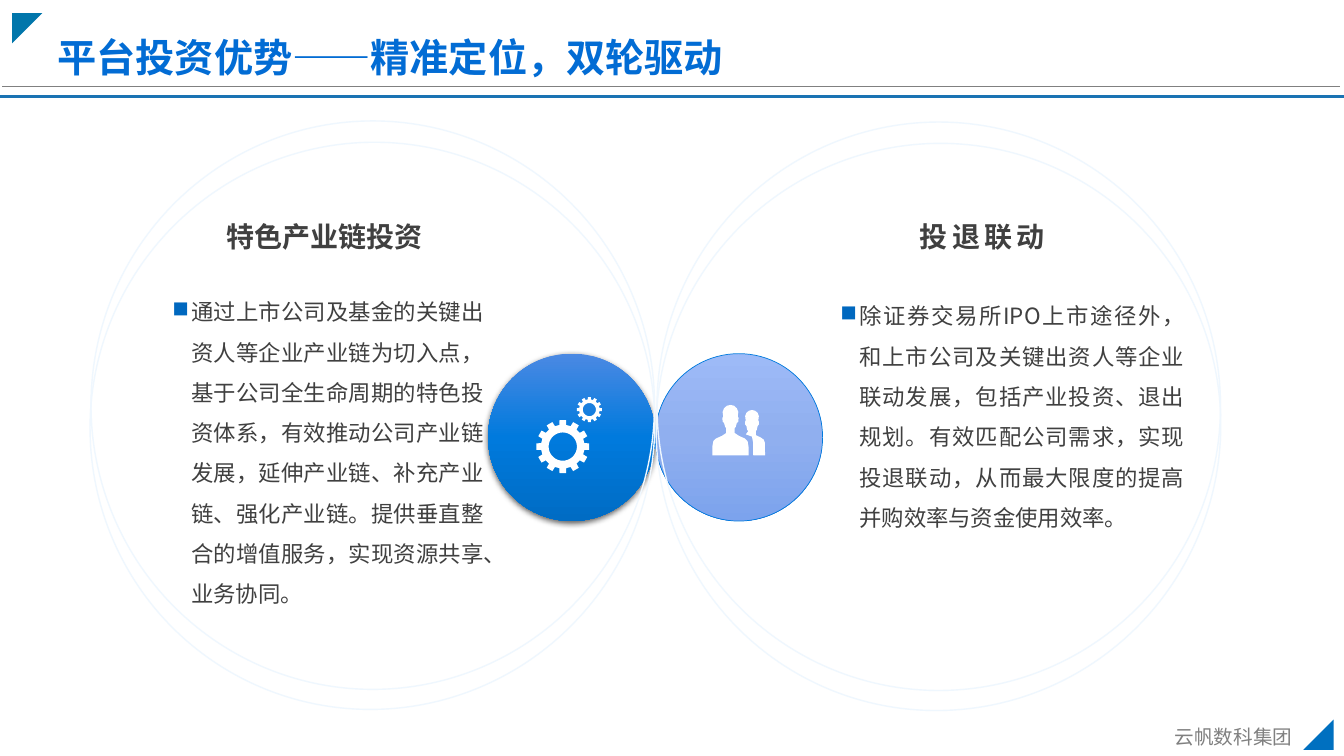
from math import cos, radians, sin

from lxml import etree
from pptx import Presentation
from pptx.dml.color import RGBColor
from pptx.enum.shapes import MSO_CONNECTOR, MSO_SHAPE
from pptx.enum.text import MSO_AUTO_SIZE, PP_ALIGN
from pptx.oxml import parse_xml
from pptx.oxml.ns import nsdecls, qn
from pptx.util import Pt

STRAIGHT = MSO_CONNECTOR.STRAIGHT
ELLIPSE = MSO_SHAPE.OVAL
DISC = MSO_SHAPE.FLOWCHART_CONNECTOR
CORNER = MSO_SHAPE.RIGHT_TRIANGLE
FIT_TEXT = MSO_AUTO_SIZE.SHAPE_TO_FIT_TEXT
JUSTIFY = PP_ALIGN.JUSTIFY

FONT = "Noto Sans CJK SC"
WHITE = RGBColor(0xFF, 0xFF, 0xFF)
GREY = RGBColor(0x80, 0x80, 0x80)
DARK = RGBColor(0x40, 0x40, 0x40)
TITLE_BLUE = RGBColor(0x02, 0x6C, 0xD4)
RULE_BLUE = RGBColor(0x1A, 0x73, 0xB3)
TOP_BLUE = RGBColor(0x01, 0x76, 0xAB)
BOTTOM_BLUE = RGBColor(0x00, 0x70, 0xC0)
BULLET_BLUE = RGBColor(0x00, 0x68, 0xBF)
RIM_BLUE = RGBColor(0x00, 0x7A, 0xDD)
RING_BLUE = RGBColor(0xEF, 0xF7, 0xFE)
CHAIN_STOPS = (RGBColor(0x4B, 0x89, 0xE3), RIM_BLUE, RGBColor(0x00, 0x6C, 0xC4))
EXIT_STOPS = (RGBColor(0x9D, 0xBA, 0xF7), RGBColor(0x90, 0xAF, 0xEF),
              RGBColor(0x7C, 0xA3, 0xED))

CHAIN_TEXT = ("通过上市公司及基金的关键出资人等企业产业链为切入点，基于公司全生命周期的"
              "特色投资体系，有效推动公司产业链发展，延伸产业链、补充产业链、强化产业链。"
              "提供垂直整合的增值服务，实现资源共享、业务协同。")
EXIT_TEXT = ("除证券交易所IPO上市途径外，和上市公司及关键出资人等企业联动发展，"
             "包括产业投资、退出规划。有效匹配公司需求，实现投退联动，"
             "从而最大限度的提高并购效率与资金使用效率。")

# Right-hand outlines of the two figures, from the crown down
FRONT_HALF = [(0, 0), (2.5, 0.5), (4.6, 2.4), (5.6, 5), (5.2, 8.4), (5.8, 9.2),
              (5.6, 11.8), (4.5, 13), (3.8, 15.6), (3, 16.6), (3, 20), (6, 22),
              (10.4, 24), (12.2, 25.8), (12.9, 29.5), (13, 36)]
BACK_HEAD = [(0, 3.6), (2.2, 4.1), (4, 5.6), (4.9, 7.9), (4.5, 11.2), (5, 12),
             (4.9, 14), (4, 15), (3.4, 17.8), (2.7, 18.7)]
BACK_BODY = [(2.7, 21.5), (6.2, 23.2), (8.4, 24.8), (9.2, 27), (9.3, 36),
             (0.9, 36), (0.8, 27), (0, 22.6), (-4.4, 21)]


def style(shape, fill=None, line=None, width=1):
    shape.shadow.inherit = False
    if fill is None:
        shape.fill.background()
    else:
        shape.fill.solid()
        shape.fill.fore_color.rgb = fill
    if line is None:
        shape.line.fill.background()
    else:
        shape.line.color.rgb = line
        shape.line.width = Pt(width)


def add_rule(slide, x1, x2, y, color, width):
    rule = slide.shapes.add_connector(STRAIGHT, Pt(x1), Pt(y), Pt(x2), Pt(y))
    rule.line.color.rgb = color
    rule.line.width = Pt(width)
    etree.SubElement(rule._element.spPr, qn("a:effectLst"))


def add_preset(slide, kind, x, y, w, h, rotation=0, **look):
    shape = slide.shapes.add_shape(kind, Pt(x), Pt(y), Pt(w), Pt(h))
    shape.rotation = rotation
    style(shape, **look)
    return shape


def add_disc(slide, x, stops, line=None, shadow=False):
    disc = add_preset(slide, DISC, x, 252.6, 119.6, 119.6, line=line, width=0.5)
    properties = disc._element.spPr
    stop_xml = "".join(f'<a:gs pos="{i * 50000}"><a:srgbClr val="{color}"/></a:gs>'
                       for i, color in enumerate(stops))
    gradient = parse_xml(f'<a:gradFill {nsdecls("a")}><a:gsLst>{stop_xml}</a:gsLst>'
                         '<a:lin ang="5400000" scaled="0"/></a:gradFill>')
    properties.replace(properties.find(qn("a:noFill")), gradient)
    if shadow:
        properties.find(qn("a:effectLst")).append(parse_xml(
            f'<a:outerShdw {nsdecls("a")} blurRad="{Pt(4.5)}" dist="{Pt(1.5)}" '
            'dir="5400000" rotWithShape="0"><a:srgbClr val="000000">'
            '<a:alpha val="63000"/></a:srgbClr></a:outerShdw>'))


def add_outline(slide, contours):
    """Draw closed contours as one white shape; an inner contour is a hole."""
    contours = [[(Pt(x), Pt(y)) for x, y in contour] for contour in contours]
    builder = slide.shapes.build_freeform(*contours[0][0])
    builder.add_line_segments(contours[0][1:], close=True)
    for contour in contours[1:]:
        builder.move_to(*contour[0])
        builder.add_line_segments(contour[1:], close=True)
    style(builder.convert_to_shape(), fill=WHITE)


def add_gear(slide, cx, cy, tip, root, hole, teeth=12):
    def at(radius, angle):
        return cx + radius * cos(radians(angle)), cy + radius * sin(radians(angle))

    profile = [(root, -9), (tip, -7), (tip, 7), (root, 9)]
    rim = [at(radius, tooth * 360 / teeth + turn)
           for tooth in range(teeth) for radius, turn in profile]
    add_outline(slide, [rim, [at(hole, -angle) for angle in range(0, 360, 10)]])


def add_people(slide, front_x, back_x, top):
    def mirror(half):
        return [(-x, y) for x, y in reversed(half[1:])]

    front = FRONT_HALF + mirror(FRONT_HALF)
    back = BACK_HEAD + BACK_BODY + mirror(BACK_HEAD)
    add_outline(slide, [[(cx + x, top + y) for x, y in figure]
                        for cx, figure in ((front_x, front), (back_x, back))])


def add_text(slide, x, y, w, h, text, size, color, bold=False, spacing=None,
             tracking=0, bullet=False, wrap=True):
    box = slide.shapes.add_textbox(Pt(x), Pt(y), Pt(w), Pt(h))
    box.text_frame.word_wrap = wrap
    box.text_frame.auto_size = FIT_TEXT
    paragraph = box.text_frame.paragraphs[0]
    paragraph.text = text
    if spacing:
        paragraph.line_spacing = spacing
    if bullet:
        paragraph.alignment = JUSTIFY
        properties = paragraph._p.get_or_add_pPr()
        properties.set("marL", str(Pt(13.5)))
        properties.set("indent", str(-Pt(13.5)))
        color_tag = etree.SubElement(properties, qn("a:buClr"))
        etree.SubElement(color_tag, qn("a:srgbClr"), val=str(BULLET_BLUE))
        etree.SubElement(properties, qn("a:buFont"), typeface="Wingdings")
        etree.SubElement(properties, qn("a:buChar"), char="n")
    font = paragraph.font
    font.name, font.size, font.bold = FONT, Pt(size), bold
    font.color.rgb = color
    etree.SubElement(font._rPr, qn("a:ea"), typeface=FONT)
    if tracking:
        font._rPr.set("spc", str(tracking * 100))


def add_rings(slide, x, y):
    add_preset(slide, ELLIPSE, x, y, 402.5, 406, line=RING_BLUE)
    add_preset(slide, ELLIPSE, x - 2, y + 16.5, 406, 402.5, rotation=120, line=RING_BLUE)


def main():
    deck = Presentation()
    deck.slide_width, deck.slide_height = Pt(960), Pt(540)
    slide = deck.slides.add_slide(deck.slide_layouts[6])
    slide.background.fill.solid()
    slide.background.fill.fore_color.rgb = WHITE

    # Header, corners and footer
    add_rule(slide, 0, 960, 68.7, RULE_BLUE, 2.25)
    add_preset(slide, CORNER, 8.6, 9.4, 21.6, 21.6, rotation=90, fill=TOP_BLUE)
    add_preset(slide, CORNER, 931, 514, 21.6, 21.6, rotation=270, fill=BOTTOM_BLUE)
    add_rule(slide, 1.5, 957.5, 61.9, GREY, 1)
    add_text(slide, 832, 514, 99.4, 24.5, "云帆数科集团", 14, GREY, wrap=False)
    add_text(slide, 34, 20, 591, 41, "平台投资优势——精准定位，双轮驱动", 28,
             TITLE_BLUE, bold=True)

    # Two wheels with their icons
    add_disc(slide, 348.6, CHAIN_STOPS, shadow=True)
    add_gear(slide, 402, 319, tip=19, root=15.6, hole=10.1)
    add_gear(slide, 421, 292.6, tip=9, root=7.3, hole=4.7)
    add_disc(slide, 468, EXIT_STOPS, line=RIM_BLUE)
    add_people(slide, front_x=521.8, back_x=537.2, top=289.3)
    add_rings(slide, 65, 86.4)
    add_rings(slide, 469.3, 87.2)

    # Industry chain investment
    add_text(slide, 154.8, 141, 160, 44, "特色产业链投资", 20, DARK, bold=True, spacing=1.5)
    add_text(slide, 116, 200, 237, 240, CHAIN_TEXT, 16, DARK, spacing=1.5, bullet=True)

    # Investment and exit linkage
    add_text(slide, 650, 141, 110, 40, "投退联动", 20, DARK, bold=True, spacing=1.5,
             tracking=3)
    add_text(slide, 593.3, 203, 260, 181.5, EXIT_TEXT, 16, DARK, spacing=1.5, bullet=True)

    deck.save("out.pptx")


if __name__ == "__main__":
    main()
